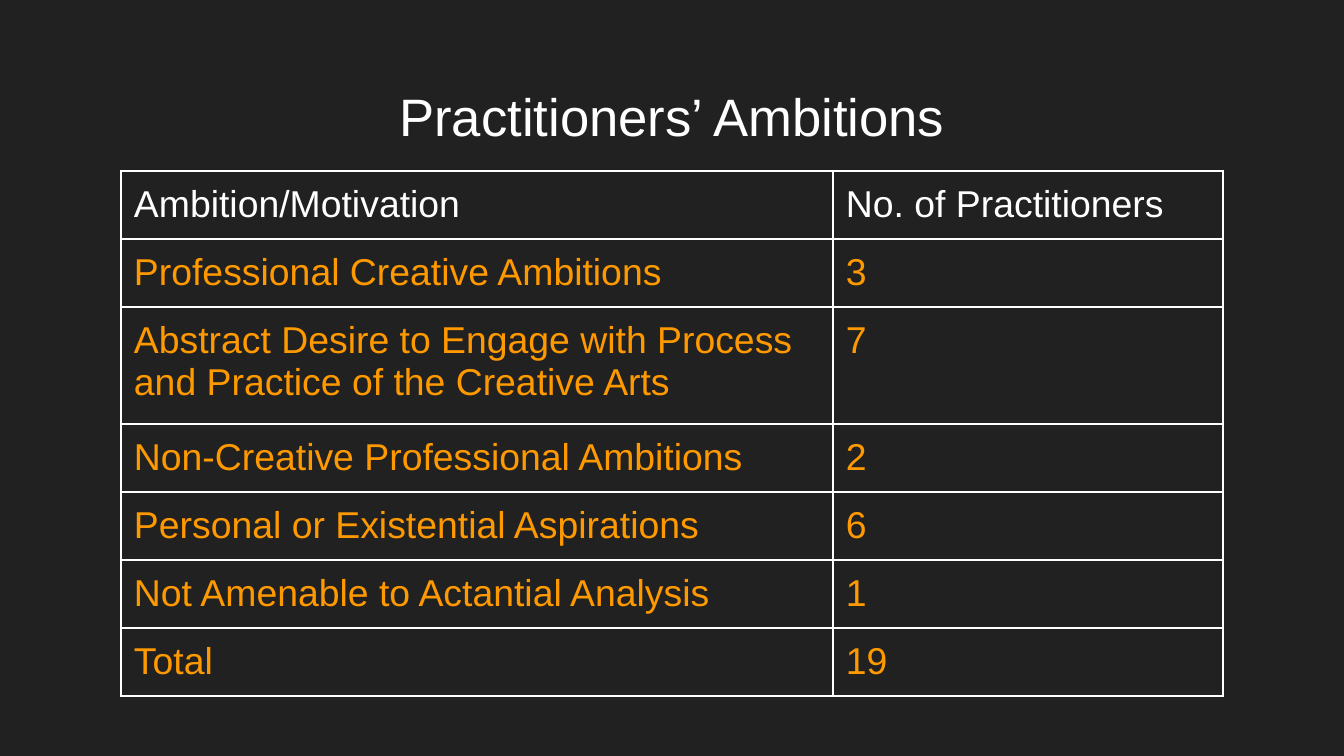
from lxml.etree import SubElement
from pptx import Presentation
from pptx.dml.color import RGBColor
from pptx.enum.text import MSO_ANCHOR as Anchor, PP_ALIGN as Align
from pptx.oxml.ns import qn
from pptx.util import Emu, Pt

TITLE = "Practitioners’ Ambitions"
HEADER = ("Ambition/Motivation", "No. of Practitioners")
AMBITIONS = [
    ("Professional Creative Ambitions", 3),
    ("Abstract Desire to Engage with Process and Practice of the Creative Arts", 7),
    ("Non-Creative Professional Ambitions", 2),
    ("Personal or Existential Aspirations", 6),
    ("Not Amenable to Actantial Analysis", 1),
]
TOTAL = ("Total", sum(count for _, count in AMBITIONS))

BACKGROUND, WHITE, ORANGE = "212121", "FFFFFF", "FF9900"
TITLE_BOX = (46, 66, 1252, 84)
TABLE_LEFT, TABLE_TOP = 121, 171
COLUMN_WIDTHS = (712, 390)
ROW_HEIGHT, TALL_ROW_HEIGHT, TALL_ROW = 68, 117, 2
INSET, TITLE_TOP_INSET = 13, 18


def px(length):
    return Emu(round(length * 914400 / 134.4))


def color(hex_code):
    return RGBColor.from_string(hex_code)


def set_font(paragraph, size, hex_code):
    paragraph.font.name = "Arial"
    paragraph.font.size = Pt(size)
    paragraph.font.color.rgb = color(hex_code)


def set_insets(target):
    target.margin_left = target.margin_right = px(INSET)
    target.margin_top = target.margin_bottom = px(INSET)


def add_borders(cell):
    properties = cell._tc.get_or_add_tcPr()
    for position, side in enumerate(("lnL", "lnR", "lnT", "lnB")):
        line = properties.makeelement(qn(f"a:{side}"), {"w": str(Pt(1.5))})
        fill = SubElement(line, qn("a:solidFill"))
        SubElement(fill, qn("a:srgbClr"), val=WHITE)
        properties.insert(position, line)


def add_title(slide):
    title = slide.shapes.title
    title.left, title.top, title.width, title.height = map(px, TITLE_BOX)
    frame = title.text_frame
    frame.text = TITLE
    frame.word_wrap = True
    frame.vertical_anchor = Anchor.TOP
    set_insets(frame)
    frame.margin_top = px(TITLE_TOP_INSET)
    paragraph = frame.paragraphs[0]
    paragraph.alignment = Align.CENTER
    paragraph.line_spacing = 1.0
    set_font(paragraph, 28.2, WHITE)


def add_ambitions_table(slide):
    rows = [HEADER, *AMBITIONS, TOTAL]
    heights = [TALL_ROW_HEIGHT if r == TALL_ROW else ROW_HEIGHT for r in range(len(rows))]
    table = slide.shapes.add_table(
        len(rows), len(HEADER), px(TABLE_LEFT), px(TABLE_TOP),
        px(sum(COLUMN_WIDTHS)), px(sum(heights))).table
    table.first_row = table.horz_banding = False
    for column, width in zip(table.columns, COLUMN_WIDTHS):
        column.width = px(width)
    for r, (row, height) in enumerate(zip(rows, heights)):
        table.rows[r].height = px(height)
        for c, content in enumerate(row):
            cell = table.cell(r, c)
            cell.text = str(content)
            cell.fill.background()
            set_insets(cell)
            set_font(cell.text_frame.paragraphs[0], 20, WHITE if r == 0 else ORANGE)
            add_borders(cell)


def main():
    presentation = Presentation()
    presentation.slide_width, presentation.slide_height = px(1344), px(756)
    slide = presentation.slides.add_slide(presentation.slide_layouts[5])
    slide.background.fill.solid()
    slide.background.fill.fore_color.rgb = color(BACKGROUND)
    add_title(slide)
    add_ambitions_table(slide)
    presentation.save("out.pptx")


if __name__ == "__main__":
    main()
